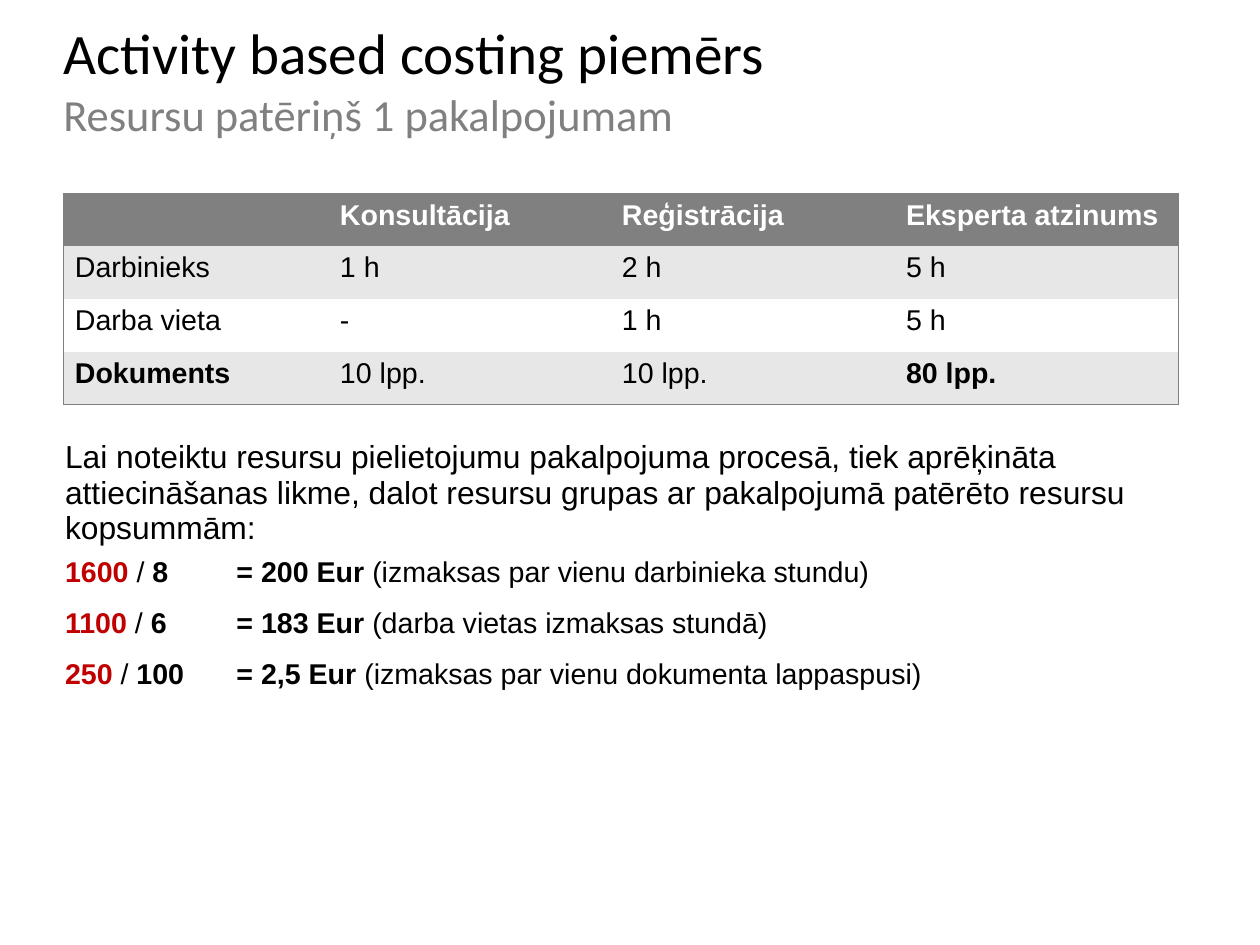
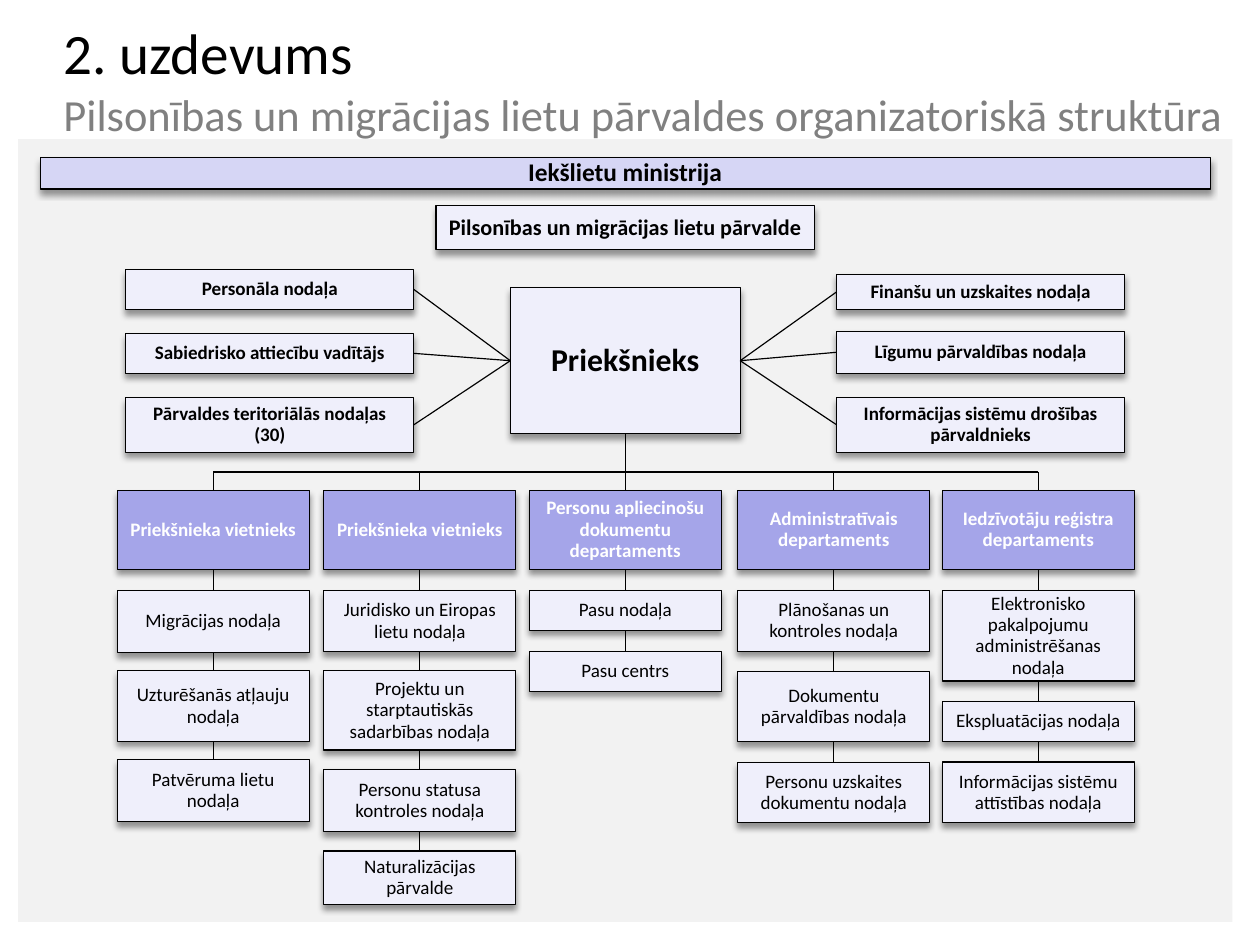
from lxml.etree import SubElement
from pptx import Presentation
from pptx.dml.color import RGBColor
from pptx.enum.shapes import MSO_CONNECTOR, MSO_SHAPE
from pptx.enum.text import MSO_ANCHOR, PP_ALIGN
from pptx.oxml.ns import qn
from pptx.util import Pt

BLACK = RGBColor(0x00, 0x00, 0x00)
WHITE = RGBColor(0xFF, 0xFF, 0xFF)
GREY = RGBColor(0x80, 0x80, 0x80)
BAND = RGBColor(0xE7, 0xE7, 0xE7)
PANEL = RGBColor(0xF2, 0xF2, 0xF2)
RED = RGBColor(0xC0, 0x00, 0x00)
LILAC = RGBColor(0xD6, 0xD6, 0xF5)
PALE = RGBColor(0xEF, 0xEF, 0xFB)
VIOLET = RGBColor(0xA5, 0xA5, 0xE9)
HEADING_FONT, BODY_FONT = "Calibri", "Arial"
NO_GRID_STYLE = "{2D5ABB26-0587-4C30-8999-92F81FD0307C}"

USAGE = [
    ["", "Konsultācija", "Reģistrācija", "Eksperta atzinums"],
    ["Darbinieks", "1 h", "2 h", "5 h"],
    ["Darba vieta", "-", "1 h", "5 h"],
    ["Dokuments", "10 lpp.", "10 lpp.", "80 lpp."],
]
BOLD_CELLS = {"Dokuments", "80 lpp."}
INTRO = ("Lai noteiktu resursu pielietojumu pakalpojuma procesā, tiek aprēķināta "
         "attiecināšanas likme, dalot resursu grupas ar pakalpojumā patērēto "
         "resursu kopsummām:")
RATES = [
    ("1600", "8", "200", "(izmaksas par vienu darbinieka stundu)"),
    ("1100", "6", "183", "(darba vietas izmaksas stundā)"),
    ("250", "100", "2,5", "(izmaksas par vienu dokumenta lappaspusi)"),
]

# Staff units: top within the panel, height, text
LEFT_STAFF = [
    (82, 25.2, "Personāla nodaļa"),
    (122.3, 25.2, "Sabiedrisko attiecību vadītājs"),
    (162.6, 34.6, "Pārvaldes teritoriālās nodaļas (30)"),
]
RIGHT_STAFF = [
    (85, 22.3, "Finanšu un uzskaites nodaļa"),
    (120.9, 26.6, "Līgumu pārvaldības nodaļa"),
    (162.6, 34.6, "Informācijas sistēmu drošības pārvaldnieks"),
]
# Departments: left within the panel, gap between units, heading, (height, unit)
DEPARTMENTS = [
    (62.4, 11.5, "Priekšnieka vietnieks", [
        (39, "Migrācijas nodaļa"),
        (44.5, "Uzturēšanās atļauju nodaļa"),
        (39, "Patvēruma lietu nodaļa")]),
    (192.6, 12, "Priekšnieka vietnieks", [
        (38.5, "Juridisko un Eiropas lietu nodaļa"),
        (50, "Projektu un starptautiskās sadarbības nodaļa"),
        (39.5, "Personu statusa kontroles nodaļa"),
        (34, "Naturalizācijas pārvalde")]),
    (322, 13.5, "Personu apliecinošu dokumentu departaments", [
        (25, "Pasu nodaļa"),
        (25, "Pasu centrs")]),
    (453.4, 13, "Administratīvais departaments", [
        (38.2, "Plānošanas un kontroles nodaļa"),
        (44, "Dokumentu pārvaldības nodaļa"),
        (38.2, "Personu uzskaites dokumentu nodaļa")]),
    (582.2, 13, "Iedzīvotāju reģistra departaments", [
        (57, "Elektronisko pakalpojumu administrēšanas nodaļa"),
        (25, "Ekspluatācijas nodaļa"),
        (38.2, "Informācijas sistēmu attīstības nodaļa")]),
]


def style(font, size, color=BLACK, bold=False, name=HEADING_FONT):
    font.name, font.size, font.bold = name, Pt(size), bold
    font.color.rgb = color


def add_title(page, title, subtitle):
    box = page.shapes.add_textbox(Pt(40), Pt(0), Pt(753), Pt(99))
    frame = box.text_frame
    frame.word_wrap = True
    frame.vertical_anchor = MSO_ANCHOR.MIDDLE
    frame.margin_left = frame.margin_right = frame.margin_top = frame.margin_bottom = 0
    para = frame.paragraphs[0]
    para.text = f"{title}\v{subtitle}"
    para.line_spacing, para.space_after = 1.01, Pt(6.6)
    for span, size, color in zip(para.runs, (36, 28), (BLACK, GREY)):
        style(span.font, size, color)


def add_border(cell, side):
    """Draw a 1 pt grey line on one side: lnL, lnR, lnT or lnB."""
    props = cell._tc.get_or_add_tcPr()
    line = props.makeelement(qn(f"a:{side}"), {"w": "12700"})
    fill = SubElement(line, qn("a:solidFill"))
    SubElement(fill, qn("a:srgbClr"), val=str(GREY))
    props.insert(len(props.findall("*")) - 1, line)


def add_usage_table(page, left, top, column_widths, row_height):
    rows, columns = len(USAGE), len(column_widths)
    frame = page.shapes.add_table(rows, columns, Pt(left), Pt(top),
                                  Pt(sum(column_widths)), Pt(rows * row_height))
    table = frame.table
    table._tbl.tblPr.find(qn("a:tableStyleId")).text = NO_GRID_STYLE
    for column, width in zip(table.columns, column_widths):
        column.width = Pt(width)
    for r, texts in enumerate(USAGE):
        table.rows[r].height = Pt(row_height)
        for c, text in enumerate(texts):
            cell = table.cell(r, c)
            cell.fill.solid()
            cell.fill.fore_color.rgb = GREY if r == 0 else BAND if r % 2 else WHITE
            para = cell.text_frame.paragraphs[0]
            para.text = text
            style(para.font, 18, name=BODY_FONT)
            for span in para.runs:
                style(span.font, 18, BLACK if r else WHITE,
                      r == 0 or text in BOLD_CELLS, BODY_FONT)
            edges = {"lnL": c == 0, "lnR": c == columns - 1,
                     "lnT": r == 0, "lnB": r == rows - 1}
            for side, outer in edges.items():
                if outer:
                    add_border(cell, side)


def add_rates(page, left, top, width, height):
    box = page.shapes.add_textbox(Pt(left), Pt(top), Pt(width), Pt(height))
    frame = box.text_frame
    frame.word_wrap = True
    para = frame.paragraphs[0]
    para.text, para.line_spacing = INTRO, 0.93
    style(para.runs[0].font, 20, name=BODY_FONT)
    for cost, amount, rate, note in RATES:
        para = frame.add_paragraph()
        tabs = SubElement(para._p.get_or_add_pPr(), qn("a:tabLst"))
        SubElement(tabs, qn("a:tab"), pos=str(Pt(108)), algn="l")
        para.line_spacing = 0.93
        para.space_before = para.space_after = Pt(6)
        for text, color, bold in ((cost, RED, True), (" / ", BLACK, False),
                                  (f"{amount}\t= {rate} Eur ", BLACK, True),
                                  (note, BLACK, False)):
            span = para.add_run()
            span.text = text
            style(span.font, 18, color, bold, BODY_FONT)


def add_rect(page, left, top, width, height, fill):
    rect = page.shapes.add_shape(MSO_SHAPE.RECTANGLE, Pt(left), Pt(top),
                                 Pt(width), Pt(height))
    rect.shadow.inherit = False
    rect.fill.solid()
    rect.fill.fore_color.rgb = fill
    rect.line.fill.background()
    return rect


def add_unit(page, left, top, width, height, text, fill=PALE, size=12,
             color=BLACK, bold=True):
    """Outlined, shadowed box with centred text."""
    unit = add_rect(page, left, top, width, height, fill)
    unit.line.color.rgb, unit.line.width = BLACK, Pt(0.75)
    effects = unit._element.spPr.find(qn("a:effectLst"))
    shadow = SubElement(effects, qn("a:outerShdw"), blurRad=str(Pt(4)),
                        dist=str(Pt(3)), dir="5400000", algn="ctr", rotWithShape="0")
    tint = SubElement(shadow, qn("a:srgbClr"), val=str(BLACK))
    SubElement(tint, qn("a:alpha"), val="40000")
    frame = unit.text_frame
    frame.word_wrap = True
    frame.vertical_anchor = MSO_ANCHOR.MIDDLE
    para = frame.paragraphs[0]
    para.text, para.alignment, para.line_spacing = text, PP_ALIGN.CENTER, 0.93
    style(para.runs[0].font, size, color, bold)


def add_line(page, x1, y1, x2, y2):
    line = page.shapes.add_connector(MSO_CONNECTOR.STRAIGHT,
                                     Pt(x1), Pt(y1), Pt(x2), Pt(y2))
    line.line.color.rgb, line.line.width = BLACK, Pt(0.75)
    SubElement(line._element.spPr, qn("a:effectLst"))


def add_leadership(page, left, top, width):
    """Ministry, authority, chief and staff; returns the chief's bottom edge."""
    middle = left + width / 2
    add_unit(page, left + 14, top + 11.4, width - 28, 20,
             "Iekšlietu ministrija", LILAC, 16)
    add_unit(page, middle - 119.2, top + 41.7, 238.4, 28,
             "Pilsonības un migrācijas lietu pārvalde", size=14)
    chief_top, chief_width, chief_height = top + 93.5, 144.8, 92
    add_unit(page, middle - chief_width / 2, chief_top, chief_width, chief_height,
             "Priekšnieks", size=20)
    staff_width, inset = 181.4, 67.9
    for side, staff in ((-1, LEFT_STAFF), (1, RIGHT_STAFF)):
        inner = middle + side * (width / 2 - inset - staff_width)
        staff_left = inner if side > 0 else inner - staff_width
        for offset, height, text in staff:
            add_unit(page, staff_left, top + offset, staff_width, height, text)
            add_line(page, middle + side * chief_width / 2,
                     chief_top + chief_height / 2, inner, top + offset + height / 2)
    return chief_top + chief_height


def add_department(page, left, top, gap, heading, units):
    width, height, drop = 121, 49.7, 13.5
    center = left + width / 2
    add_unit(page, left, top, width, height, heading, VIOLET, color=WHITE)
    bottom = top + height
    for height, text in units:
        add_line(page, center, bottom, center, bottom + drop)
        add_unit(page, left, bottom + drop, width, height, text, bold=False)
        bottom += drop + height
        drop = gap
    return center


def add_org_chart(page, left, top, width):
    chief_bottom = add_leadership(page, left, top, width)
    bus, heads = top + 209.6, top + 221.1
    centers = [add_department(page, left + offset, heads, *rest)
               for offset, *rest in DEPARTMENTS]
    add_line(page, centers[0], bus, centers[-1], bus)
    for index, center in enumerate(centers):
        start = chief_bottom if index == len(centers) // 2 else bus
        add_line(page, center, start, center, heads)


def build_costing_slide(page):
    add_rates(page, 33.9, 274, 737.3, 303)
    add_usage_table(page, 40, 121.8, (167, 177.6, 179, 179), 33.3)
    add_title(page, "Activity based costing piemērs", "Resursu patēriņš 1 pakalpojumam")


def build_structure_slide(page):
    left, top, width = 11.4, 87.7, 765
    add_rect(page, left, top, width, 493, PANEL)
    add_title(page, "2. uzdevums",
              "Pilsonības un migrācijas lietu pārvaldes organizatoriskā struktūra")
    add_org_chart(page, left, top, width)


def main():
    deck = Presentation()
    deck.slide_width = Pt(793.75)
    deck.slide_height = Pt(595.25)
    blank = deck.slide_layouts[6]
    build_costing_slide(deck.slides.add_slide(blank))
    build_structure_slide(deck.slides.add_slide(blank))
    deck.save("out.pptx")


if __name__ == "__main__":
    main()
